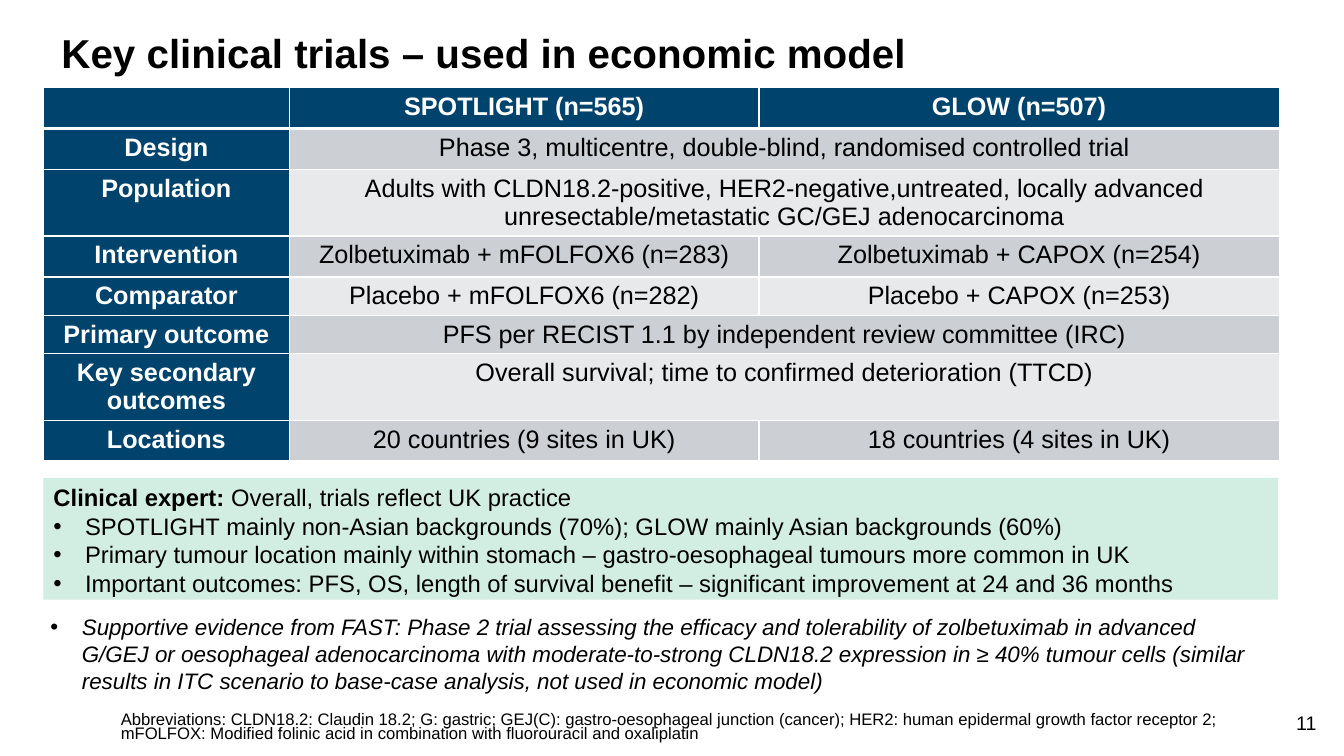
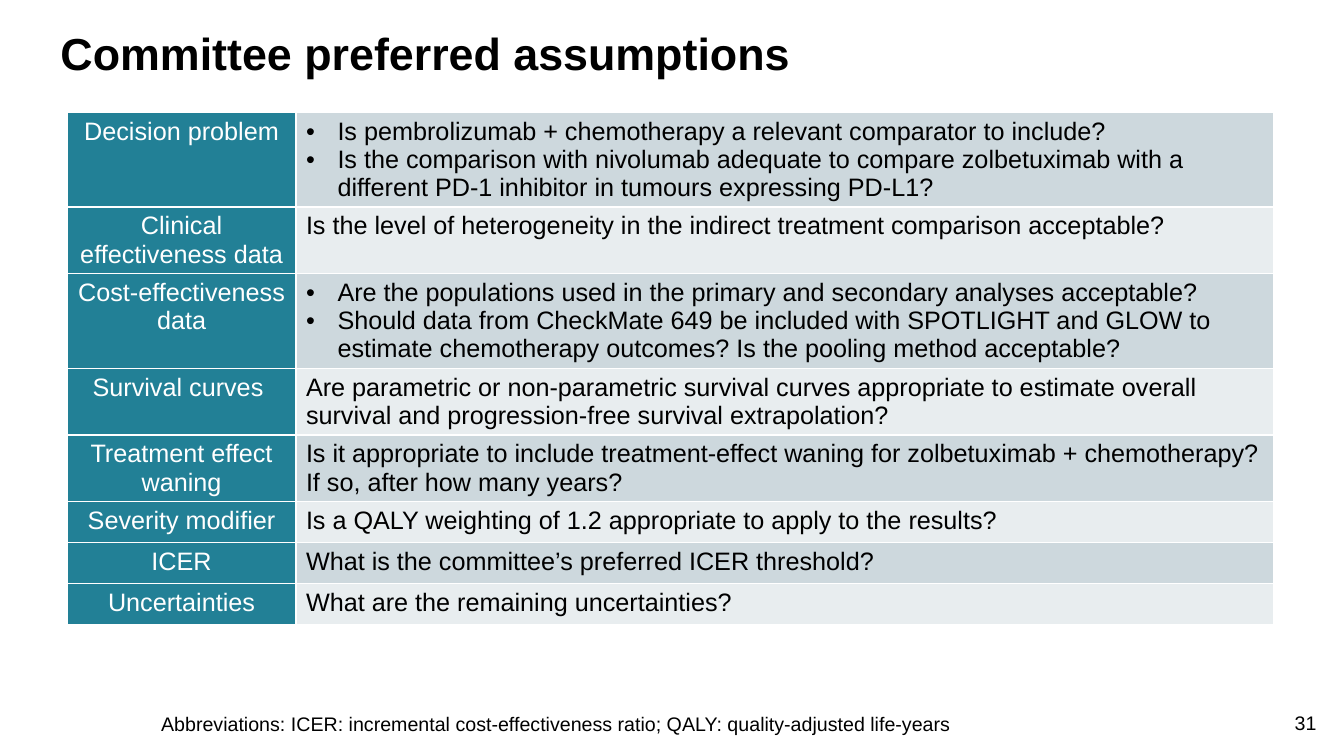
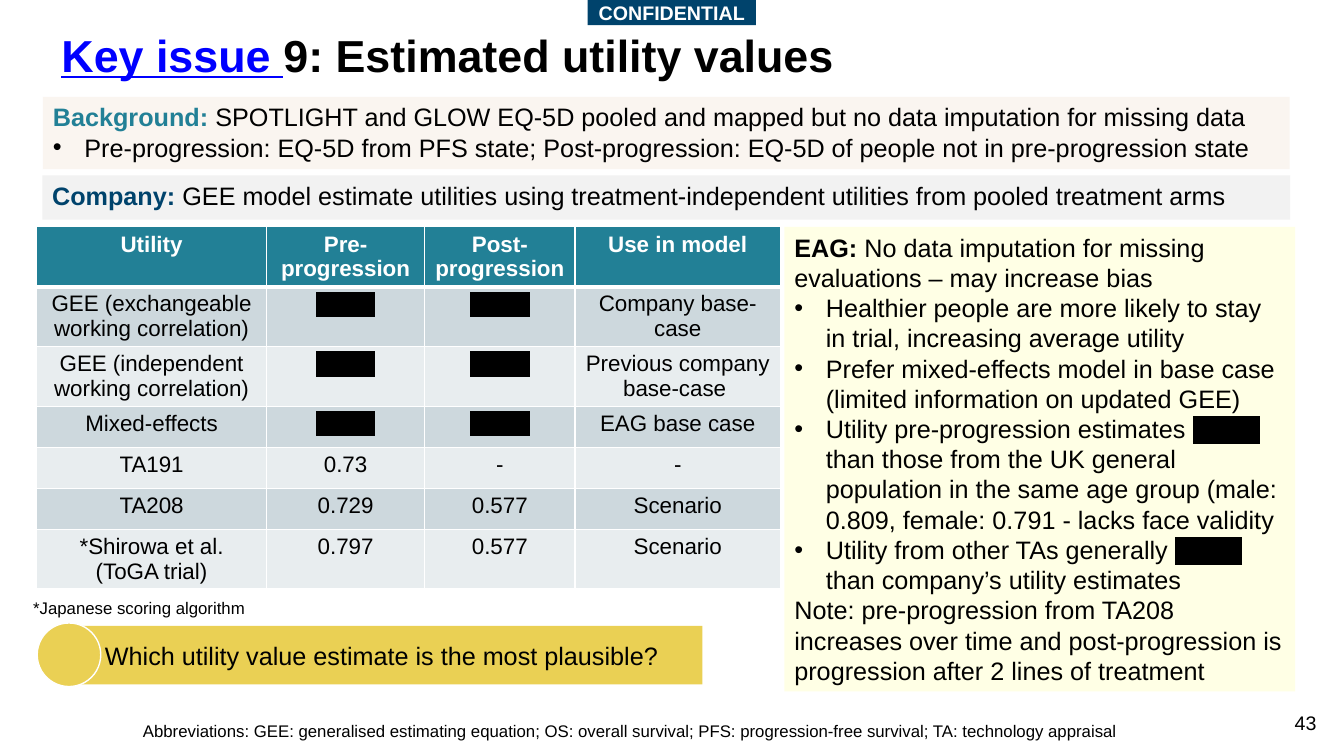
from dataclasses import dataclass
from typing import Optional, Union

from lxml.etree import SubElement
from pptx import Presentation
from pptx.dml.color import RGBColor
from pptx.enum.shapes import MSO_SHAPE
from pptx.enum.text import MSO_ANCHOR, MSO_AUTO_SIZE, PP_ALIGN
from pptx.oxml.ns import qn
from pptx.util import Pt

COLORS = {
    "black": "000000", "white": "FFFFFF", "navy": "00436C", "teal": "228096",
    "link": "0000FF", "grey_dark": "CCCFD4", "grey_light": "E7E9EB",
    "mist_dark": "CDD8DD", "mist_light": "E8EDEF", "mint": "D2EEE3",
    "cream": "FAF5F0", "pale": "F2F2F2", "lemon": "FFFFE5", "gold": "EAD054",
}
FONT = "Arial"
HANG = 22.5


@dataclass(frozen=True)
class Box:
    x: float
    y: float
    w: float
    h: float


@dataclass(frozen=True)
class Run:
    text: str
    color: Optional[str] = None
    bold: Optional[bool] = None
    italic: Optional[bool] = None
    underline: Optional[bool] = None
    redacted: bool = False


@dataclass(frozen=True)
class Para:
    runs: tuple
    bullet: bool = False


@dataclass(frozen=True)
class Style:
    size: float
    color: str = "black"
    bold: bool = False
    align: PP_ALIGN = PP_ALIGN.LEFT
    spacing: float = 1.0
    anchor: MSO_ANCHOR = MSO_ANCHOR.TOP
    wrap: bool = True
    left: float = 7.2
    right: float = 7.2


@dataclass(frozen=True)
class TableLook:
    size: float
    head: str
    bands: tuple
    header_row: bool = False
    label_column: bool = False
    label_bold: bool = False
    body_align: PP_ALIGN = PP_ALIGN.CENTER


Content = Union[str, Run, tuple]
REDACTED = Run("XXXX", underline=True, redacted=True)


def rgb(name: str) -> RGBColor:
    return RGBColor.from_string(COLORS[name])


def para(*parts: Union[str, Run], bullet: bool = False) -> Para:
    return Para(tuple(Run(t) if isinstance(t, str) else t for t in parts), bullet)


def item(*parts: Union[str, Run]) -> Para:
    return para(*parts, bullet=True)


def paras(content: Content) -> tuple:
    return content if isinstance(content, tuple) else (para(content),)


def apply(target, values: dict) -> None:
    for name, value in values.items():
        setattr(target, name, value)


def set_bullet(p, bullet: bool) -> None:
    pPr = p._p.get_or_add_pPr()
    pPr.set("marL", str(Pt(HANG) if bullet else 0))
    pPr.set("indent", str(-Pt(HANG) if bullet else 0))
    if bullet:
        SubElement(pPr, qn("a:buFont"), typeface=FONT)
        SubElement(pPr, qn("a:buChar"), char="•")
    else:
        SubElement(pPr, qn("a:buNone"))


def write(tf, content: Content, style: Style) -> None:
    for i, source in enumerate(paras(content)):
        p = tf.paragraphs[0] if i == 0 else tf.add_paragraph()
        set_bullet(p, source.bullet)
        apply(p, {"alignment": style.align, "line_spacing": style.spacing,
                  "space_before": Pt(0), "space_after": Pt(0)})
        for run in source.runs:
            r = p.add_run()
            r.text = run.text
            apply(r.font, {
                "name": FONT, "size": Pt(style.size), "italic": run.italic,
                "bold": style.bold if run.bold is None else run.bold,
                "underline": run.underline,
            })
            r.font.color.rgb = rgb(run.color or style.color)
            if run.redacted:
                rPr = r._r.get_or_add_rPr()
                mark = SubElement(rPr, qn("a:highlight"))
                SubElement(mark, qn("a:srgbClr"), val=COLORS["black"])
                rPr.find(qn("a:solidFill")).addnext(mark)


def frame(sp, content: Content, style: Style) -> None:
    tf = sp.text_frame
    apply(tf, {
        "word_wrap": style.wrap, "auto_size": MSO_AUTO_SIZE.NONE,
        "vertical_anchor": style.anchor,
        "margin_left": Pt(style.left), "margin_right": Pt(style.right),
        "margin_top": Pt(3.6), "margin_bottom": Pt(3.6),
    })
    write(tf, content, style)


def place(sp, box: Box) -> None:
    apply(sp, {"left": Pt(box.x), "top": Pt(box.y),
               "width": Pt(box.w), "height": Pt(box.h)})


def add_text(slide, box: Box, content: Content, style: Style) -> None:
    sp = slide.shapes.add_textbox(Pt(box.x), Pt(box.y), Pt(box.w), Pt(box.h))
    frame(sp, content, style)


def add_body(slide, idx: int, box: Box, content: Content, style: Style,
             fill: Optional[str] = None) -> None:
    sp = slide.placeholders[idx]
    place(sp, box)
    if fill:
        sp.fill.solid()
        sp.fill.fore_color.rgb = rgb(fill)
    frame(sp, content, style)


def add_panel(slide, box: Box, fill: str, content: Optional[Content] = None,
              style: Optional[Style] = None, outline: Optional[str] = None,
              kind: MSO_SHAPE = MSO_SHAPE.RECTANGLE) -> None:
    sp = slide.shapes.add_shape(kind, Pt(box.x), Pt(box.y), Pt(box.w), Pt(box.h))
    sp.shadow.inherit = False
    sp.fill.solid()
    sp.fill.fore_color.rgb = rgb(fill)
    if outline:
        sp.line.color.rgb = rgb(outline)
        sp.line.width = Pt(1)
    else:
        sp.line.fill.background()
    if content and style:
        frame(sp, content, style)


def set_borders(cell, top: float, bottom: float) -> None:
    tcPr = cell._tc.get_or_add_tcPr()
    widths = {"a:lnL": 1, "a:lnR": 1, "a:lnT": top, "a:lnB": bottom}
    for i, (tag, width) in enumerate(widths.items()):
        ln = SubElement(tcPr, qn(tag), w=str(Pt(width)))
        fill = SubElement(ln, qn("a:solidFill"))
        SubElement(fill, qn("a:srgbClr"), val=COLORS["white"])
        tcPr.insert(i, ln)


def add_grid(slide, x: float, y: float, widths: list, heights: list,
             rows: list, look: TableLook) -> None:
    table = slide.shapes.add_table(
        len(rows), len(widths), Pt(x), Pt(y), Pt(sum(widths)), Pt(sum(heights))).table
    apply(table, {"first_row": look.header_row, "horz_banding": False})
    for col, width in zip(table.columns, widths):
        col.width = Pt(width)
    for row, height in zip(table.rows, heights):
        row.height = Pt(height)
    for i, row in enumerate(rows):
        for j, content in enumerate(row):
            cell = table.cell(i, j)
            header = look.header_row and i == 0
            label = look.label_column and j == 0
            body = not (header or label)
            cell.fill.solid()
            band = look.bands[(i - look.header_row) % 2]
            cell.fill.fore_color.rgb = rgb(band if body else look.head)
            set_borders(cell, 3 if look.header_row and i == 1 else 1,
                        3 if header else 1)
            if content is None:
                table.cell(i, j - 1).merge(cell)
            elif content:
                write(cell.text_frame, content, Style(
                    look.size, "black" if body else "white",
                    header or (label and look.label_bold),
                    look.body_align if body else PP_ALIGN.CENTER))


def new_slide(prs, layout: int, number: int, title: Content, title_size: float,
              title_at: tuple, footnote: str, footnote_box: Box, footnote_style: Style):
    slide = prs.slides.add_slide(prs.slide_layouts[layout])
    place(slide.shapes.title, Box(*title_at, 885.6, 46.8))
    frame(slide.shapes.title, title, Style(title_size, bold=True, spacing=0.9))
    add_text(slide, Box(910.8, 504, 36.7, 28.8), str(number),
             Style(14, align=PP_ALIGN.RIGHT))
    add_text(slide, footnote_box, footnote, footnote_style)
    return slide


TITLE_ONLY, TWO_CONTENT = 5, 3
ROW = 29.25


def trials_slide(prs) -> None:
    slide = new_slide(
        prs, TWO_CONTENT, 11, "Key clinical trials – used in economic model", 28.8, (36.7, 20.2),
        "Abbreviations: CLDN18.2: Claudin 18.2; G: gastric; GEJ(C): gastro-oesophageal junction (cancer); HER2: human epidermal growth factor receptor 2; mFOLFOX: Modified folinic acid in combination with fluorouracil and oxaliplatin",
        Box(79.2, 506.9, 823.7, 28.8), Style(11.9, spacing=0.7))
    rows = [
        ("", "SPOTLIGHT (n=565)", "GLOW (n=507)"),
        ("Design", "Phase 3, multicentre, double-blind, randomised controlled trial", None),
        ("Population", "Adults with CLDN18.2-positive, HER2-negative,untreated, locally advanced unresectable/metastatic GC/GEJ adenocarcinoma", None),
        ("Intervention", "Zolbetuximab + mFOLFOX6 (n=283)", "Zolbetuximab + CAPOX (n=254)"),
        ("Comparator", "Placebo + mFOLFOX6 (n=282)", "Placebo + CAPOX (n=253)"),
        ("Primary outcome", "PFS per RECIST 1.1 by independent review committee (IRC)", None),
        ("Key secondary outcomes", "Overall survival; time to confirmed deterioration (TTCD)", None),
        ("Locations", "20 countries (9 sites in UK)", "18 countries (4 sites in UK)"),
    ]
    add_grid(slide, 31, 62.6, [175.7, 335.5, 371.5],
             [ROW, ROW, 47, ROW, 27.3, 27.3, 47, ROW], rows,
             TableLook(18, "navy", ("grey_dark", "grey_light"), header_row=True,
                       label_column=True, label_bold=True))
    add_body(slide, 1, Box(31, 341.3, 882, 87.1), (
        para(Run("Clinical expert: ", bold=True), "Overall, trials reflect UK practice"),
        item("SPOTLIGHT mainly non-Asian backgrounds (70%); GLOW mainly Asian backgrounds (60%)"),
        item("Primary tumour location mainly within stomach – gastro-oesophageal tumours more common in UK"),
        item("Important outcomes: PFS, OS, length of survival benefit – significant improvement at 24 and 36 months"),
    ), Style(17, right=2.9), "mint")
    add_body(slide, 2, Box(28.8, 434.2, 875.5, 65.5), (
        item(Run("Supportive evidence from FAST: Phase 2 trial assessing the efficacy and tolerability of zolbetuximab in advanced G/GEJ or oesophageal adenocarcinoma with moderate-to-strong CLDN18.2 expression in ≥ 40% tumour cells (similar results in ITC scenario to base-case analysis, not used in economic model)", italic=True)),
    ), Style(16))


def assumptions_slide(prs) -> None:
    slide = new_slide(
        prs, TITLE_ONLY, 31, "Committee preferred assumptions", 32, (36, 19.4),
        "Abbreviations: ICER: incremental cost-effectiveness ratio; QALY: quality-adjusted life-years",
        Box(108, 506.9, 707, 28.8), Style(14, spacing=0.9))
    rows = [
        ("Decision problem", (
            item("Is pembrolizumab + chemotherapy a relevant comparator to include?"),
            item("Is the comparison with nivolumab adequate to compare zolbetuximab with a different PD-1 inhibitor in tumours expressing PD-L1?"))),
        ("Clinical effectiveness data", "Is the level of heterogeneity in the indirect treatment comparison acceptable?"),
        ("Cost-effectiveness data", (
            item("Are the populations used in the primary and secondary analyses acceptable?"),
            item("Should data from CheckMate 649 be included with SPOTLIGHT and GLOW to estimate chemotherapy outcomes? Is the pooling method acceptable?"))),
        ("Survival curves ", "Are parametric or non-parametric survival curves appropriate to estimate overall survival and progression-free survival extrapolation?"),
        ("Treatment effect waning", "Is it appropriate to include treatment-effect waning for zolbetuximab + chemotherapy? If so, after how many years?"),
        ("Severity modifier", "Is a QALY weighting of 1.2 appropriate to apply to the results?"),
        ("ICER", "What is the committee’s preferred ICER threshold?"),
        ("Uncertainties", "What are the remaining uncertainties?"),
    ]
    add_grid(slide, 48, 80.2, [163.4, 698.4], [67.5, 47, 67.5, 47, 47] + [ROW] * 3, rows,
             TableLook(18, "teal", ("mist_dark", "mist_light"), label_column=True,
                       body_align=PP_ALIGN.LEFT))


def utility_slide(prs) -> None:
    slide = new_slide(
        prs, TWO_CONTENT, 43,
        (para(Run("Key issue ", "link", underline=True), "9: Estimated utility values"),),
        32, (36.7, 20.2),
        "Abbreviations: GEE: generalised estimating equation; OS: overall survival; PFS: progression-free survival; TA: technology appraisal",
        Box(95, 512.6, 752.4, 23), Style(12, spacing=0.9))
    panel = Style(18)
    add_body(slide, 1, Box(30.6, 69.1, 890.6, 51.8), (
        para(Run("Background: ", "teal", True), "SPOTLIGHT and GLOW EQ-5D pooled and mapped but no data imputation for missing data"),
        item("Pre-progression: EQ-5D from PFS state; Post-progression: EQ-5D of people not in pre-progression state"),
    ), panel, "cream")
    add_panel(slide, Box(30.2, 125.3, 891.4, 31.7), "pale", (
        para(Run("Company: ", "navy", True), "GEE model estimate utilities using treatment-independent utilities from pooled treatment arms"),
    ), panel)
    rows = [
        ("Utility", "Pre-progression", "Post-progression", "Use in model"),
        ("GEE (exchangeable working correlation)", REDACTED, REDACTED, "Company base-case"),
        ("GEE (independent working correlation)", REDACTED, REDACTED, "Previous company base-case "),
        ("Mixed-effects", REDACTED, REDACTED, "EAG base case"),
        ("TA191", "0.73", "-", "-"),
        ("TA208", "0.729", "0.577", "Scenario"),
        ("*Shirowa et al. (ToGA trial)", "0.797", "0.577", "Scenario"),
    ]
    add_grid(slide, 26.2, 162, [164.2, 113, 107.3, 146.9],
             [42.5, 42.5, 42.5, ROW, ROW, ROW, 42.5], rows,
             TableLook(16, "teal", ("mist_dark", "mist_light"), header_row=True))
    add_body(slide, 2, Box(560.2, 162, 365, 331.9), (
        para(Run("EAG: ", bold=True), "No data imputation for missing evaluations – may increase bias"),
        item("Healthier people are more likely to stay in trial, increasing average utility"),
        item("Prefer mixed-effects model in base case (limited information on updated GEE)"),
        item("Utility pre-progression estimates ", REDACTED, " than those from the UK general population in the same age group (male: 0.809, female: 0.791 - lacks face validity"),
        item("Utility from other TAs generally ", REDACTED, " than company’s utility estimates"),
        para("Note: pre-progression from TA208 increases over time and post-progression is progression after 2 lines of treatment"),
    ), panel, "lemon")
    add_text(slide, Box(16.6, 423.4, 167, 21.6), "*Japanese scoring algorithm",
             Style(12, wrap=False))
    add_panel(slide, Box(54.7, 447.1, 447.1, 41.8), "gold",
              "Which utility value estimate is the most plausible?",
              Style(18, anchor=MSO_ANCHOR.MIDDLE, left=20.2))
    add_panel(slide, Box(26.6, 445, 45.4, 45.4), "gold", outline="white", kind=MSO_SHAPE.OVAL)
    add_panel(slide, Box(419.8, 0, 120.2, 18), "navy", "CONFIDENTIAL",
              Style(14, "white", True, PP_ALIGN.CENTER, anchor=MSO_ANCHOR.MIDDLE))


def main() -> None:
    prs = Presentation()
    apply(prs, {"slide_width": Pt(960), "slide_height": Pt(540)})
    for build in (trials_slide, assumptions_slide, utility_slide):
        build(prs)
    prs.save("out.pptx")


if __name__ == "__main__":
    main()
